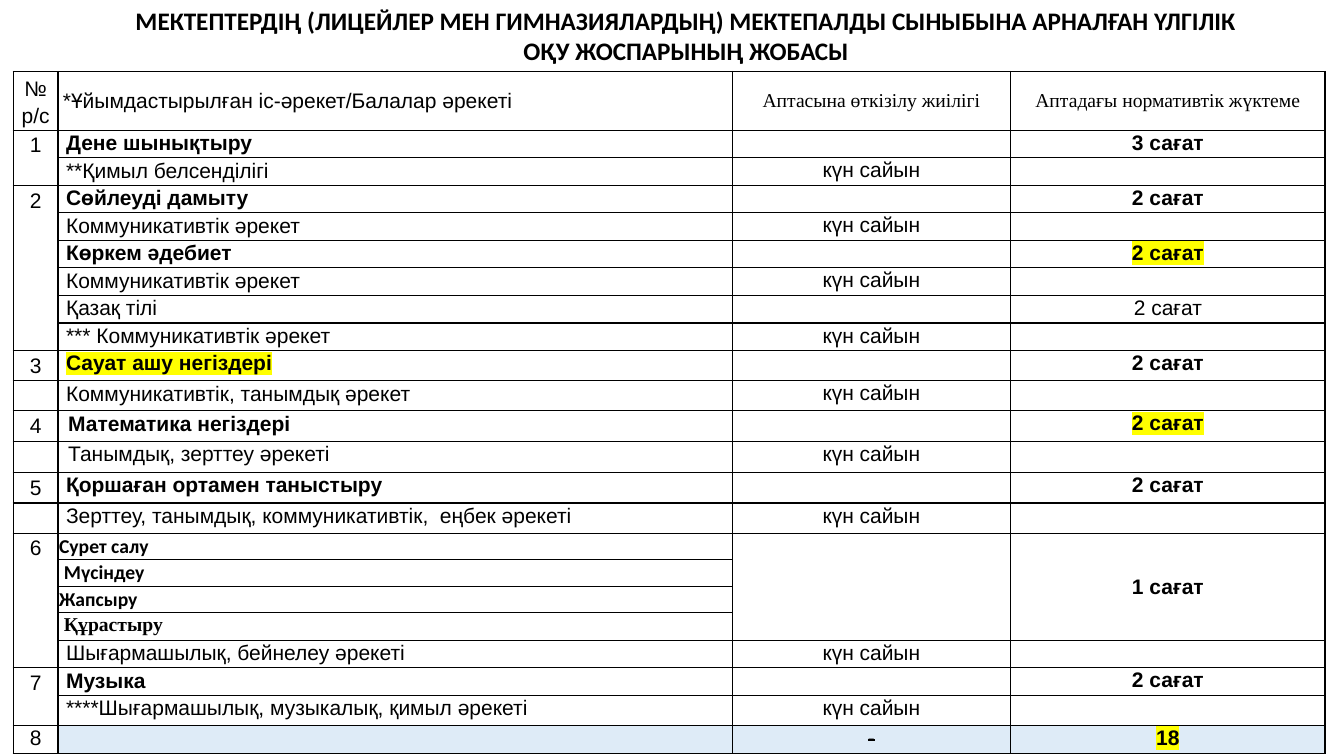
from lxml.etree import SubElement
from pptx import Presentation
from pptx.dml.color import RGBColor
from pptx.enum.text import MSO_ANCHOR, PP_ALIGN
from pptx.oxml.ns import qn
from pptx.util import Pt

BLACK = RGBColor(0, 0, 0)
WHITE = RGBColor(255, 255, 255)
BLUE = RGBColor(0xDE, 0xEB, 0xF7)
YELLOW = RGBColor(255, 255, 0)

DAILY = "күн сайын"
# Font, size, bold, left indent
HEAD = ("Arial", 15, True, 5)
PLAIN = ("Arial", 15, False, 5)
MATH = ("Arial", 15, True, 6.5)
STUDY = ("Arial", 15, False, 6.5)
CRAFT = ("Calibri", 14, True, 0)
SHIFT = ("Calibri", 14, True, 3.5)
BUILD = ("Times New Roman", 14, True, 3.5)

# Number, activity, style, frequency, load, row height
ROWS = [
    ("1", "Дене шынықтыру", HEAD, "", "3 сағат", 19.7),
    ("", "**Қимыл белсенділігі", PLAIN, DAILY, "", 19.7),
    ("2", "Сөйлеуді дамыту", HEAD, "", "2 сағат", 19.7),
    ("", "Коммуникативтік әрекет", PLAIN, DAILY, "", 19.7),
    ("", "Көркем әдебиет", HEAD, "", "2 сағат", 19.7),
    ("", "Коммуникативтік әрекет", PLAIN, DAILY, "", 19.7),
    ("", "Қазақ тілі", PLAIN, "", "2 сағат", 19.7),
    ("", "*** Коммуникативтік әрекет", PLAIN, DAILY, "", 19.7),
    ("3", "Сауат ашу негіздері", HEAD, "", "2 сағат", 21.5),
    ("", "Коммуникативтік, танымдық әрекет", PLAIN, DAILY, "", 21.5),
    ("4", "Математика негіздері", MATH, "", "2 сағат", 22),
    ("", "Танымдық, зерттеу әрекеті", STUDY, DAILY, "", 22),
    ("5", "Қоршаған ортамен таныстыру", HEAD, "", "2 сағат", 22),
    ("", "Зерттеу, танымдық, коммуникативтік,  еңбек әрекеті", PLAIN, DAILY, "", 21.5),
    ("6", "Сурет салу", CRAFT, "", "1 сағат", 19),
    ("", "Мүсіндеу", SHIFT, "", "", 19),
    ("", "Жапсыру", CRAFT, "", "", 19),
    ("", "Құрастыру", BUILD, "", "", 19.5),
    ("", "Шығармашылық, бейнелеу әрекеті", PLAIN, DAILY, "", 19.7),
    ("7", "Музыка", HEAD, "", "2 сағат", 19.7),
    ("", "****Шығармашылық, музыкалық, қимыл әрекеті", PLAIN, DAILY, "", 21.5),
    ("8", "", HEAD, "-", "18", 20),
]
TOP = 42
WIDTHS = [32, 481.5, 199, 224.5]
# Row, column, rows covered
SPANS = [(1, 0, 2), (3, 0, 6), (15, 0, 5), (20, 0, 2), (15, 2, 4), (15, 3, 4)]
MARKED = [(5, 3), (9, 1), (11, 3), (22, 3)]


def add_run(para, text, face, size, bold=False, mark=False):
    run = para.add_run()
    run.text = text
    font = run.font
    font.name, font.size, font.bold = face, Pt(size), bold
    font.color.rgb = BLACK
    if mark:
        props = run._r.get_or_add_rPr()
        glow = SubElement(props, qn("a:highlight"))
        SubElement(glow, qn("a:srgbClr"), val=str(YELLOW))
        props.find(qn("a:solidFill")).addnext(glow)
    return run


def set_cell(cell, pad, fill):
    """Give a cell its margins, fill and thin black borders."""
    cell.margin_left = cell.margin_right = Pt(pad[0])
    cell.margin_top = cell.margin_bottom = Pt(pad[1])
    props = cell._tc.get_or_add_tcPr()
    for side in ("lnL", "lnR", "lnT", "lnB"):
        line = SubElement(props, qn("a:" + side), w=str(Pt(1)))
        paint = SubElement(line, qn("a:solidFill"))
        SubElement(paint, qn("a:srgbClr"), val=str(BLACK))
    cell.fill.solid()
    cell.fill.fore_color.rgb = fill


deck = Presentation()
deck.slide_width, deck.slide_height = Pt(960), Pt(540)
slide = deck.slides.add_slide(deck.slide_layouts[6])

title = slide.shapes.add_textbox(Pt(73.5), Pt(0), Pt(833), Pt(51)).text_frame
title.word_wrap = True
para = title.paragraphs[0]
para.alignment = PP_ALIGN.CENTER
add_run(para, "МЕКТЕПТЕРДІҢ (ЛИЦЕЙЛЕР МЕН ГИМНАЗИЯЛАРДЫҢ) МЕКТЕПАЛДЫ СЫНЫБЫНА "
        "АРНАЛҒАН ҮЛГІЛІК ОҚУ ЖОСПАРЫНЫҢ ЖОБАСЫ", "Calibri", 18, True)

highs = [TOP] + [row[-1] for row in ROWS]
frame = slide.shapes.add_table(len(highs), len(WIDTHS), Pt(9.5), Pt(51),
                               Pt(sum(WIDTHS)), Pt(sum(highs)))
plan = frame.table
plan.first_row = plan.horz_banding = False
for col, width in zip(plan.columns, WIDTHS):
    col.width = Pt(width)
for row, high in zip(plan.rows, highs):
    row.height = Pt(high)

# Text, font, size for the header
heads = [
    ("№ р/с", "Arial", 15),
    ("*Ұйымдастырылған іс-әрекет/Балалар әрекеті", "Arial", 15),
    ("Аптасына өткізілу жиілігі", "Times New Roman", 14),
    ("Аптадағы нормативтік жүктеме", "Times New Roman", 14),
]
for c, (text, face, size) in enumerate(heads):
    cell = plan.cell(0, c)
    set_cell(cell, (3.5, 0) if c else (0.75, 0.25), WHITE)
    cell.vertical_anchor = MSO_ANCHOR.MIDDLE
    para = cell.text_frame.paragraphs[0]
    para.alignment = PP_ALIGN.LEFT if c == 1 else PP_ALIGN.CENTER
    para.line_spacing = 1.05 if c else 1.15
    add_run(para, text, face, size)

for r, (number, name, style, often, load, high) in enumerate(ROWS, 1):
    last = r == len(ROWS)
    looks = [PLAIN, style, PLAIN, ("Arial", 15, style[2], 0)]
    for c, text in enumerate((number, name, often, load)):
        cell = plan.cell(r, c)
        set_cell(cell, (0.75, 0.25) if c < 2 else (3.5, 0),
                 BLUE if last and c else WHITE)
        para = cell.text_frame.paragraphs[0]
        if not text:
            para._p.get_or_add_endParaRPr().set("sz", "1000")
            continue
        face, size, heavy, left = looks[c]
        para.alignment = PP_ALIGN.LEFT if c == 1 else PP_ALIGN.CENTER
        para.line_spacing = 1.05 if c or last else 1.15
        if c == 1:
            para._p.get_or_add_pPr().set("marL", str(Pt(left)))
        run = add_run(para, text, face, size, heavy, (r, c) in MARKED)
        if text == "-":
            run._r.get_or_add_rPr().set("strike", "sngStrike")

for r, c, count in SPANS:
    plan.cell(r, c).merge(plan.cell(r + count - 1, c))
plan.cell(15, 3).vertical_anchor = MSO_ANCHOR.MIDDLE

deck.save("out.pptx")
